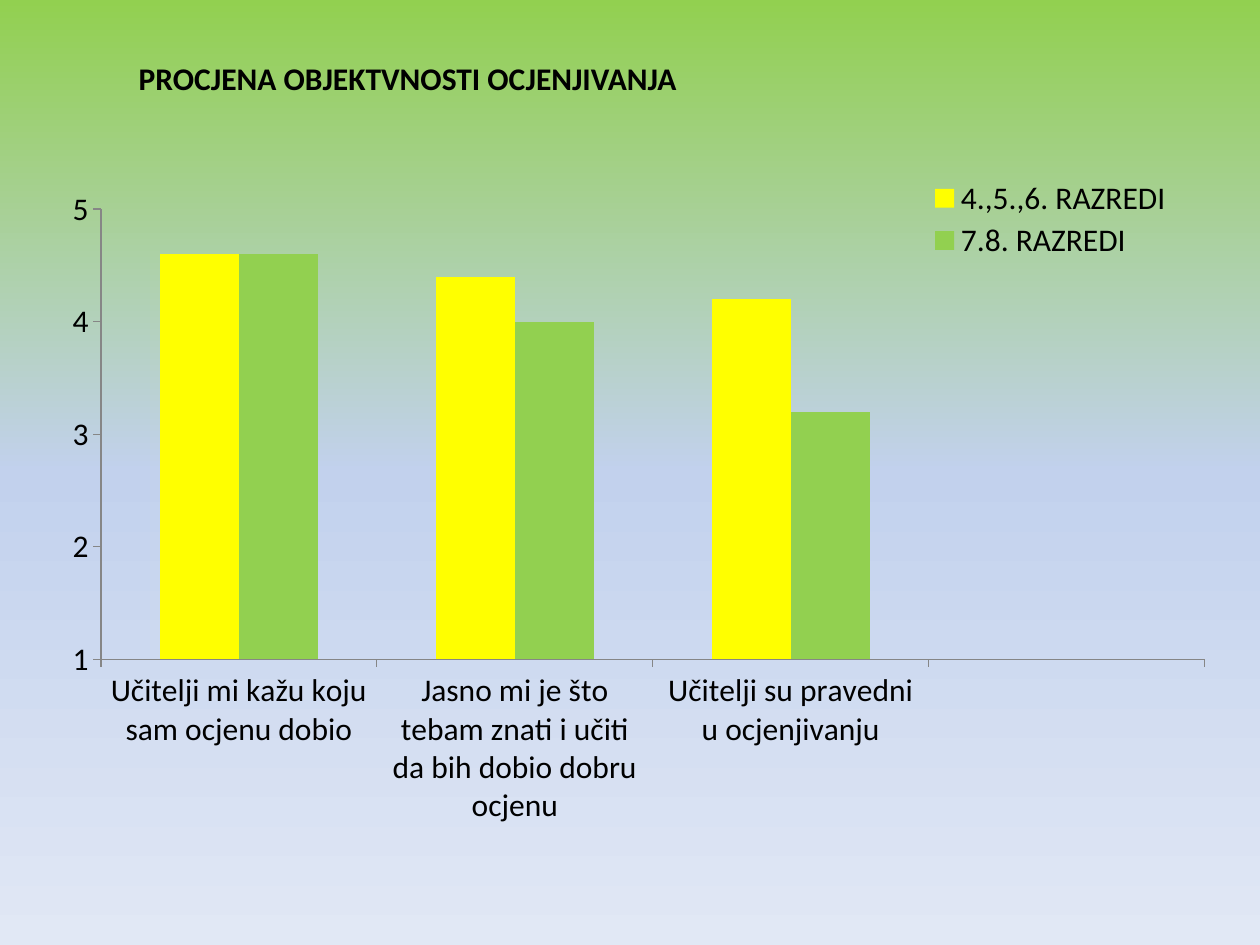
from copy import deepcopy

from lxml.etree import SubElement
from pptx import Presentation
from pptx.chart.data import CategoryChartData
from pptx.dml.color import RGBColor
from pptx.enum.chart import XL_CHART_TYPE, XL_LEGEND_POSITION, XL_TICK_MARK
from pptx.enum.text import MSO_ANCHOR, MSO_AUTO_SIZE, PP_ALIGN
from pptx.oxml.ns import qn
from pptx.util import Inches, Pt

BLACK = RGBColor(0x00, 0x00, 0x00)
GRAY = RGBColor(0x86, 0x86, 0x86)
YELLOW = RGBColor(0xFF, 0xFF, 0x00)
GREEN = RGBColor(0x92, 0xD0, 0x50)
BLUE = RGBColor(0xC2, 0xD1, 0xED)
PALE = RGBColor(0xE1, 0xE8, 0xF5)

LABELS = [
    "Učitelji mi kažu koju sam ocjenu dobio",
    "Jasno mi je što tebam znati i učiti da bih dobio dobru ocjenu",
    "Učitelji su pravedni u ocjenjivanju",
    "",
]
GRADES = [
    ("4.,5.,6. RAZREDI", [4.6, 4.4, 4.2, None], YELLOW),
    ("7.8. RAZREDI", [4.6, 4, 3.2, None], GREEN),
]


def layout(box, inner=False):
    """Make a chart layout from shares of the chart's size."""
    root = SubElement(box, qn("c:layout"))
    man = SubElement(root, qn("c:manualLayout"))

    def put(tag, val):
        SubElement(man, qn("c:" + tag)).set("val", str(val))

    if inner:
        put("layoutTarget", "inner")
    put("xMode", "edge")
    put("yMode", "edge")
    return root, put


class Deck:
    font = "Calibri"
    size = Pt(18)

    def __init__(self, wide, high):
        self.prs = Presentation()
        self.prs.slide_width = Inches(wide)
        self.prs.slide_height = Inches(high)
        self.slide = self.prs.slides.add_slide(self.prs.slide_layouts[5])

    def area(self, left, top, wide, high):
        """Turn shares of the slide into lengths."""
        w, h = self.prs.slide_width, self.prs.slide_height
        return int(left * w), int(top * h), int(wide * w), int(high * h)

    def style(self, font, bold=False):
        font.name, font.size, font.bold = self.font, self.size, bold
        font.color.rgb = BLACK

    def ground(self, colors):
        fill = self.slide.background.fill
        fill.gradient()
        fill.gradient_angle = 270
        stops = self.slide.element.find(".//" + qn("a:gsLst"))
        while len(stops) < len(colors):
            stops.append(deepcopy(stops[0]))
        for i, (stop, color) in enumerate(zip(fill.gradient_stops, colors)):
            stop.color.rgb = color
            stop.position = i / (len(colors) - 1)

    def title(self, text, *share):
        shape = self.slide.shapes.title
        shape.left, shape.top, shape.width, shape.height = self.area(*share)
        frame = shape.text_frame
        frame.text = text
        frame.word_wrap = True
        frame.auto_size = MSO_AUTO_SIZE.SHAPE_TO_FIT_TEXT
        frame.vertical_anchor = MSO_ANCHOR.TOP
        para = frame.paragraphs[0]
        para.alignment = PP_ALIGN.LEFT
        self.style(para.runs[0].font, bold=True)

    def place(self, node, index, share, inner=False):
        """Pin a chart part to shares of the chart's size."""
        root, put = layout(node, inner)
        for tag, val in zip("xywh", share):
            put(tag, val)
        for old in node.findall(qn("c:layout")):
            node.remove(old)
        node.insert(index, root)

    def axis(self, axis):
        axis.has_major_gridlines = False
        axis.major_tick_mark = XL_TICK_MARK.OUTSIDE
        axis.minor_tick_mark = XL_TICK_MARK.NONE
        axis.format.line.color.rgb = GRAY
        axis.format.line.width = Pt(0.75)
        self.style(axis.tick_labels.font)

    def chart(self, labels, series, *share):
        data = CategoryChartData()
        data.categories = labels
        for name, vals, _ in series:
            data.add_series(name, vals)
        chart = self.slide.shapes.add_chart(
            XL_CHART_TYPE.COLUMN_CLUSTERED, *self.area(*share), data).chart
        chart.has_title = False
        self.style(chart.font)

        # Columns
        plot = chart.plots[0]
        plot.gap_width, plot.overlap = 150, 0
        plot.vary_by_categories = False
        for bar, (_, _, color) in zip(plot.series, series):
            bar.format.fill.solid()
            bar.format.fill.fore_color.rgb = color

        # Axes
        self.axis(chart.category_axis)
        self.axis(chart.value_axis)
        grade = chart.value_axis
        grade.minimum_scale, grade.maximum_scale, grade.major_unit = 1, 5, 1
        grade.tick_labels.number_format = "General"
        grade.tick_labels.number_format_is_linked = False

        # Legend and plot area
        chart.has_legend = True
        chart.legend.position = XL_LEGEND_POSITION.RIGHT
        chart.legend.include_in_layout = True
        self.style(chart.legend.font)
        root = chart.element
        self.place(root.find(".//" + qn("c:legend")), 1,
                   (0.74, 0.01, 0.22, 0.13))
        self.place(root.find(".//" + qn("c:plotArea")), 0,
                   (0.05, 0.06, 0.93, 0.66), inner=True)


def main():
    deck = Deck(10, 7.5)
    deck.ground([GREEN, BLUE, PALE])
    deck.chart(LABELS, GRADES, 0.033, 0.178, 0.942, 0.722)
    deck.title("PROCJENA OBJEKTVNOSTI OCJENJIVANJA", 0.1, 0.056, 0.833, 0.054)
    deck.prs.save("out.pptx")


if __name__ == "__main__":
    main()
